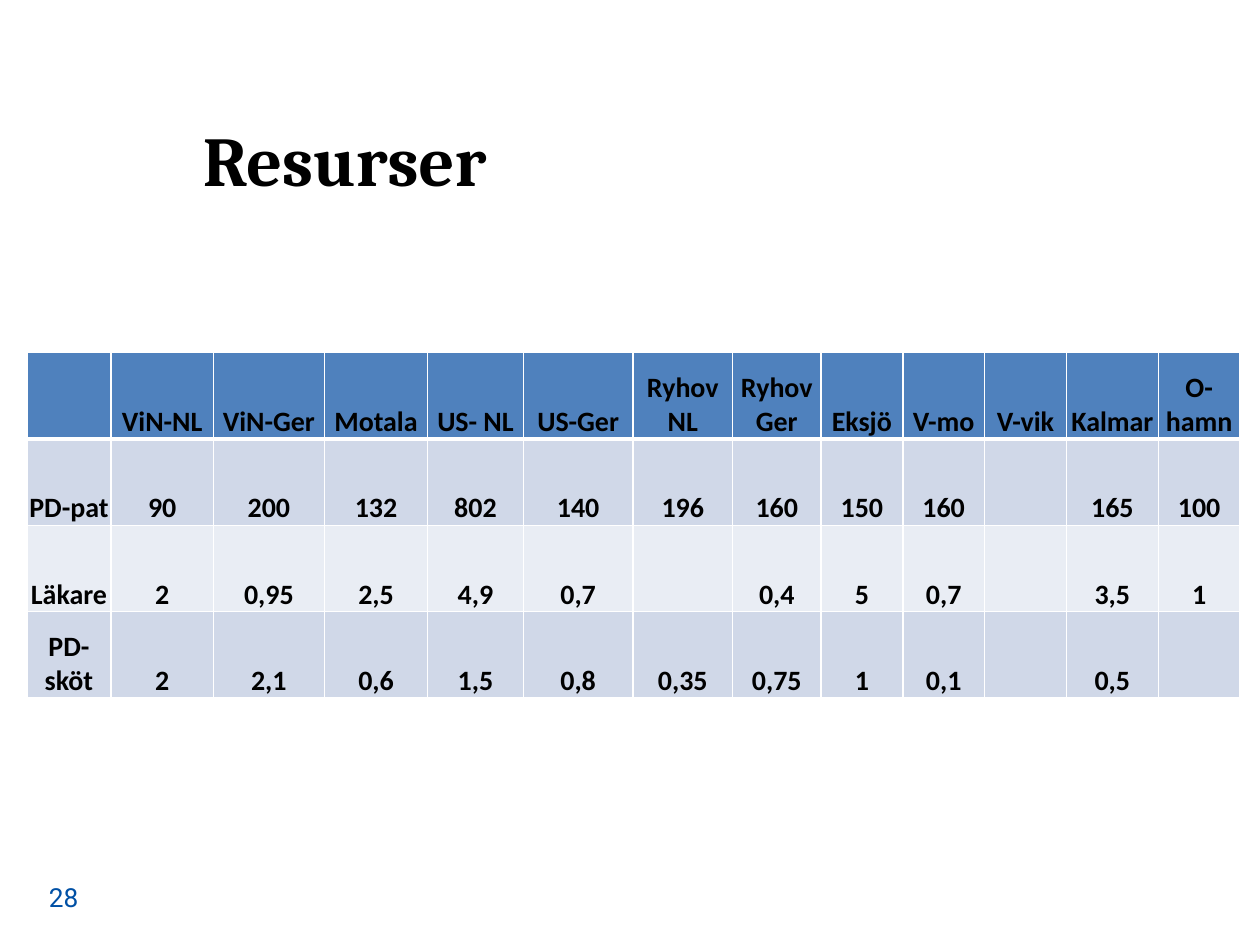
from lxml.etree import SubElement
from pptx import Presentation
from pptx.dml.color import RGBColor as Color
from pptx.enum.text import MSO_ANCHOR as Anchor, PP_ALIGN as Align
from pptx.oxml.ns import qn
from pptx.util import Cm, Pt

COLORS = {
    "text": "000000",
    "number": "0050A5",
    "header": "4F81BD",
    "odd": "D0D8E8",
    "even": "E9EDF4",
    "border": "FFFFFF",
}

ROWS = [
    ["", "ViN-NL", "ViN-Ger", "Motala", "US- NL", "US-Ger", "Ryhov NL",
     "Ryhov Ger", "Eksjö", "V-mo", "V-vik", "Kalmar", "O-hamn"],
    ["PD-pat", "90", "200", "132", "802", "140", "196",
     "160", "150", "160", "", "165", "100"],
    ["Läkare", "2", "0,95", "2,5", "4,9", "0,7", "",
     "0,4", "5", "0,7", "", "3,5", "1"],
    ["PD-sköt", "2", "2,1", "0,6", "1,5", "0,8", "0,35",
     "0,75", "1", "0,1", "", "0,5", ""],
]
COLUMN_WIDTHS = [1.7, 2.06, 2.24, 2.08, 1.93, 2.21, 2.01,
                 1.78, 1.65, 1.65, 1.65, 1.85, 1.65]
ROW_HEIGHT = 1.74
TABLE_LEFT, TABLE_TOP = 0.54, 7.11

CELL_FORMAT = {
    "vertical_anchor": Anchor.BOTTOM,
    "margin_left": Cm(0.02),
    "margin_right": Cm(0.02),
    "margin_top": Cm(0.02),
    "margin_bottom": 0,
}
CELL_FONT = {"name": "Calibri", "size": Pt(16), "bold": True}

BOXES = [
    {"text": "Resurser", "place": (3.84, 1.45, 19.71, 3.5), "color": "text",
     "anchor": Anchor.MIDDLE, "align": Align.LEFT,
     "font": {"name": "Cambria", "size": Pt(40), "bold": True}},
    {"text": "28", "place": (0.43, 17.5, 1.4, 1.02), "color": "number",
     "anchor": Anchor.BOTTOM, "align": Align.RIGHT,
     "font": {"name": "Roboto", "size": Pt(15), "bold": False}},
]


def apply(target, values):
    for name, value in values.items():
        setattr(target, name, value)


def write(para, text, align, font, color):
    para.alignment = align
    span = para.add_run()
    span.text = text
    apply(span.font, font)
    span.font.color.rgb = Color.from_string(COLORS[color])


def add_borders(cell, top, bottom):
    properties = cell._tc.get_or_add_tcPr()
    for side, width in {"L": 1, "R": 1, "T": top, "B": bottom}.items():
        line = SubElement(properties, qn(f"a:ln{side}"), w=str(Pt(width)))
        fill = SubElement(line, qn("a:solidFill"))
        SubElement(fill, qn("a:srgbClr"), val=COLORS["border"])


def add_box(page, text, place, color, anchor, align, font):
    frame = page.shapes.add_textbox(*map(Cm, place)).text_frame
    apply(frame, {"word_wrap": True, "vertical_anchor": anchor})
    write(frame.paragraphs[0], text, align, font, color)


def add_resource_table(page):
    table = page.shapes.add_table(
        len(ROWS), len(COLUMN_WIDTHS), Cm(TABLE_LEFT), Cm(TABLE_TOP),
        Cm(sum(COLUMN_WIDTHS)), Cm(ROW_HEIGHT * len(ROWS))).table
    for column, width in zip(table.columns, COLUMN_WIDTHS):
        column.width = Cm(width)
    for index, (row, texts) in enumerate(zip(table.rows, ROWS)):
        row.height = Cm(ROW_HEIGHT)
        shade = "header" if index == 0 else "odd" if index % 2 else "even"
        for cell, text in zip(row.cells, texts):
            add_borders(cell, 3 if index == 1 else 1, 3 if index == 0 else 1)
            apply(cell, CELL_FORMAT)
            cell.fill.solid()
            cell.fill.fore_color.rgb = Color.from_string(COLORS[shade])
            if text:
                write(cell.text_frame.paragraphs[0], text, Align.CENTER,
                      CELL_FONT, "text")


def main():
    deck = Presentation()
    apply(deck, {"slide_width": Cm(25.4), "slide_height": Cm(19.05)})
    page = deck.slides.add_slide(deck.slide_layouts[6])
    add_resource_table(page)
    for box in BOXES:
        add_box(page, **box)
    deck.save("out.pptx")


if __name__ == "__main__":
    main()
